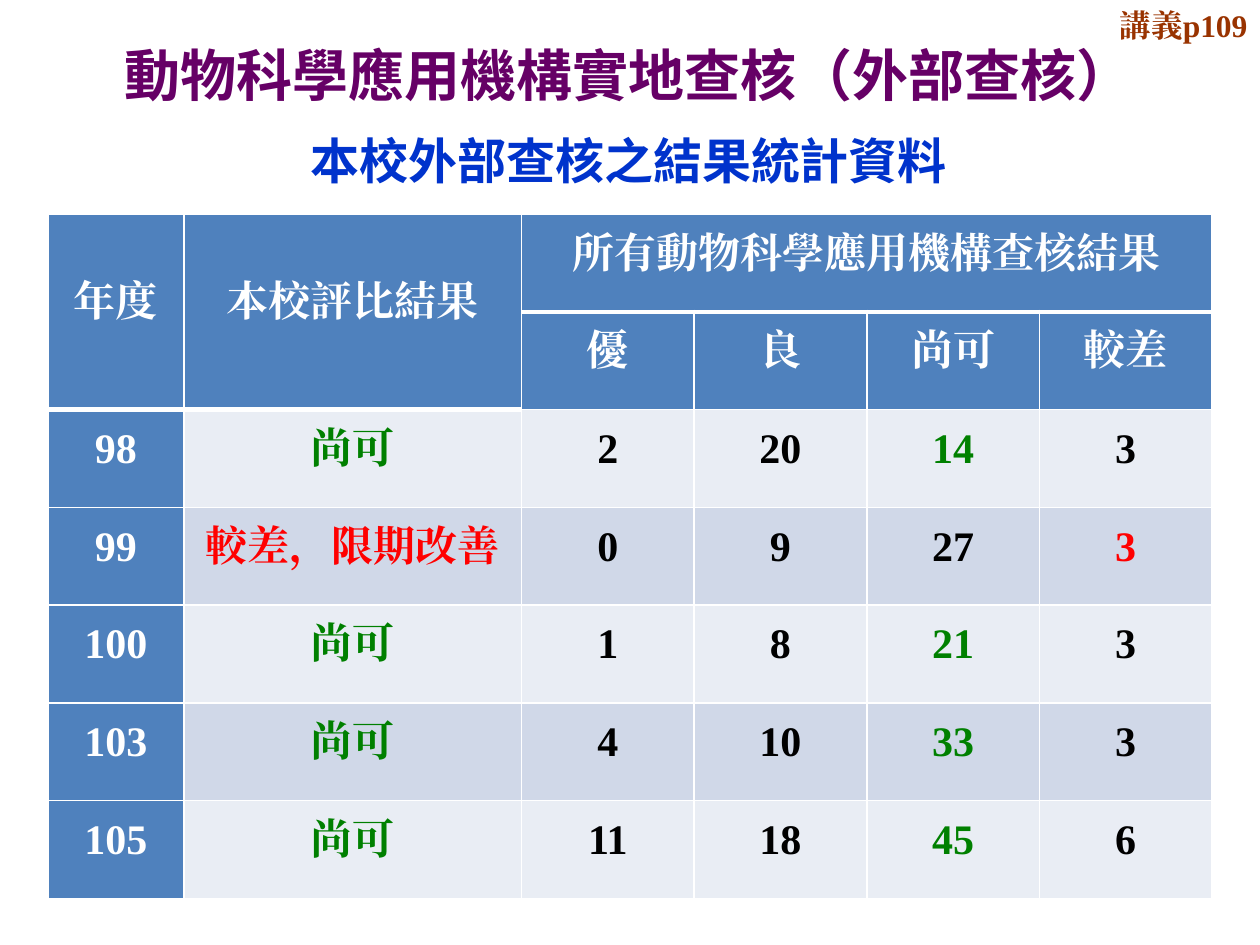
import dataclasses

import pptx
import pptx.dml.color
import pptx.enum.text
import pptx.oxml
import pptx.oxml.ns
import pptx.util

Pt = pptx.util.Pt
Align = pptx.enum.text.PP_ALIGN
MIDDLE = pptx.enum.text.MSO_ANCHOR.MIDDLE

COLORS = {
    "purple": "660066", "brown": "993300", "blue": "0033CC",
    "white": "FFFFFF", "black": "000000", "green": "008000", "red": "FF0000",
    "header": "4F81BD", "light": "E9EDF4", "dark": "D0D8E8",
}
SANS = "Noto Sans CJK SC"
SERIF = "Times New Roman"

HEADER_ROWS = 2
COLUMN_WIDTHS = [77.76, 192.96] + [98.64] * 4
ROW_HEIGHT = 55.85
GRADES = ["優", "良", "尚可", "較差"]


@dataclasses.dataclass
class Style:
    font: str
    size: float
    color: str
    align: Align = Align.CENTER


@dataclasses.dataclass
class Heading:
    text: str
    left: float
    top: float
    width: float
    height: float
    style: Style


@dataclasses.dataclass
class YearResult:
    year: str
    rating: str
    counts: list[str]
    color: str = "green"
    marked: int = 2  # index of the count shown in the rating's colour


TITLE = Heading("動物科學應用機構實地查核（外部查核）", 3.6, 15.12, 711.36, 54,
                Style(SANS, 32, "purple"))
LABELS = [
    Heading("講義p109", 552.24, 0, 167.76, 28.8, Style(SERIF, 18, "brown", Align.RIGHT)),
    Heading("本校外部查核之結果統計資料", 26.64, 71.28, 665.28, 39.6,
            Style(SANS, 28, "blue")),
]
RESULTS = [
    YearResult("98", "尚可", ["2", "20", "14", "3"]),
    YearResult("99", "較差，限期改善", ["0", "9", "27", "3"], "red", 3),
    YearResult("100", "尚可", ["1", "8", "21", "3"]),
    YearResult("103", "尚可", ["4", "10", "33", "3"]),
    YearResult("105", "尚可", ["11", "18", "45", "6"]),
]


def rgb(name: str) -> pptx.dml.color.RGBColor:
    return pptx.dml.color.RGBColor.from_string(COLORS[name])


def set_all(target, values: dict) -> None:
    for name, value in values.items():
        setattr(target, name, value)


def write(frame, text: str, style: Style) -> None:
    para = frame.paragraphs[0]
    para.alignment = style.align
    span = para.add_run()
    span.text = text
    set_all(span.font, {"name": style.font, "size": Pt(style.size), "bold": True})
    span.font.color.rgb = rgb(style.color)
    east_asian = pptx.oxml.parse_xml(
        f'<a:ea {pptx.oxml.ns.nsdecls("a")} typeface="{style.font}"/>')
    span.font._element.append(east_asian)


def fill_heading(box, heading: Heading) -> None:
    set_all(box, {name: Pt(getattr(heading, name))
                  for name in ("left", "top", "width", "height")})
    set_all(box.text_frame, {"word_wrap": True, "vertical_anchor": MIDDLE,
                             "auto_size": pptx.enum.text.MSO_AUTO_SIZE.NONE})
    write(box.text_frame, heading.text, heading.style)


def has_heavy_bottom(row: int, column: int) -> bool:
    """The thick rule lies under the top row and under the two tall headers."""
    return row == 0 or (row == 1 and column < 2)


def add_borders(cell, row: int, column: int) -> None:
    widths = {
        "lnL": 1, "lnR": 1,
        "lnT": 3 if row and has_heavy_bottom(row - 1, column) else 1,
        "lnB": 3 if has_heavy_bottom(row, column) else 1,
    }
    properties = cell._tc.get_or_add_tcPr()
    for tag, width in widths.items():
        properties.append(pptx.oxml.parse_xml(
            f'<a:{tag} {pptx.oxml.ns.nsdecls("a")} w="{Pt(width)}"><a:solidFill>'
            f'<a:srgbClr val="{COLORS["white"]}"/></a:solidFill></a:{tag}>'))


def fill_cell(cell, text: str, color: str) -> None:
    set_all(cell, {"vertical_anchor": MIDDLE, "margin_left": Pt(1.44),
                   "margin_right": Pt(1.44), "margin_top": 0, "margin_bottom": 0})
    write(cell.text_frame, text, Style(SERIF, 24, color))
    cell.text_frame.paragraphs[0].line_spacing = Pt(16)


def add_results_table(page) -> None:
    row_count = HEADER_ROWS + len(RESULTS)
    table = page.shapes.add_table(
        row_count, len(COLUMN_WIDTHS), Pt(27.36), Pt(122.4),
        Pt(sum(COLUMN_WIDTHS)), Pt(ROW_HEIGHT * row_count)).table
    for column, width in zip(table.columns, COLUMN_WIDTHS):
        column.width = Pt(width)
    for r, row in enumerate(table.rows):
        row.height = Pt(ROW_HEIGHT)
        band = "dark" if r % 2 else "light"
        for c, cell in enumerate(row.cells):
            add_borders(cell, r, c)
            cell.fill.solid()
            cell.fill.fore_color.rgb = rgb("header" if r < HEADER_ROWS or c == 0 else band)

    for column in (0, 1):
        table.cell(0, column).merge(table.cell(1, column))
    table.cell(0, 2).merge(table.cell(0, 5))

    for c, text in enumerate(["年度", "本校評比結果", "所有動物科學應用機構查核結果"]):
        fill_cell(table.cell(0, c), text, "white")
    for c, grade in enumerate(GRADES, start=2):
        fill_cell(table.cell(1, c), grade, "white")
    for r, result in enumerate(RESULTS, start=HEADER_ROWS):
        fill_cell(table.cell(r, 0), result.year, "white")
        fill_cell(table.cell(r, 1), result.rating, result.color)
        for i, count in enumerate(result.counts):
            # In year 99 only the red count is marked, as in every other year.
            fill_cell(table.cell(r, i + 2), count,
                      result.color if i == result.marked else "black")


def main() -> None:
    deck = pptx.Presentation()
    set_all(deck, {"slide_width": Pt(720), "slide_height": Pt(540)})
    page = deck.slides.add_slide(deck.slide_layouts[5])
    fill_heading(page.shapes.title, TITLE)
    for label in LABELS:
        fill_heading(page.shapes.add_textbox(0, 0, 0, 0), label)
    add_results_table(page)
    deck.save("out.pptx")


if __name__ == "__main__":
    main()
